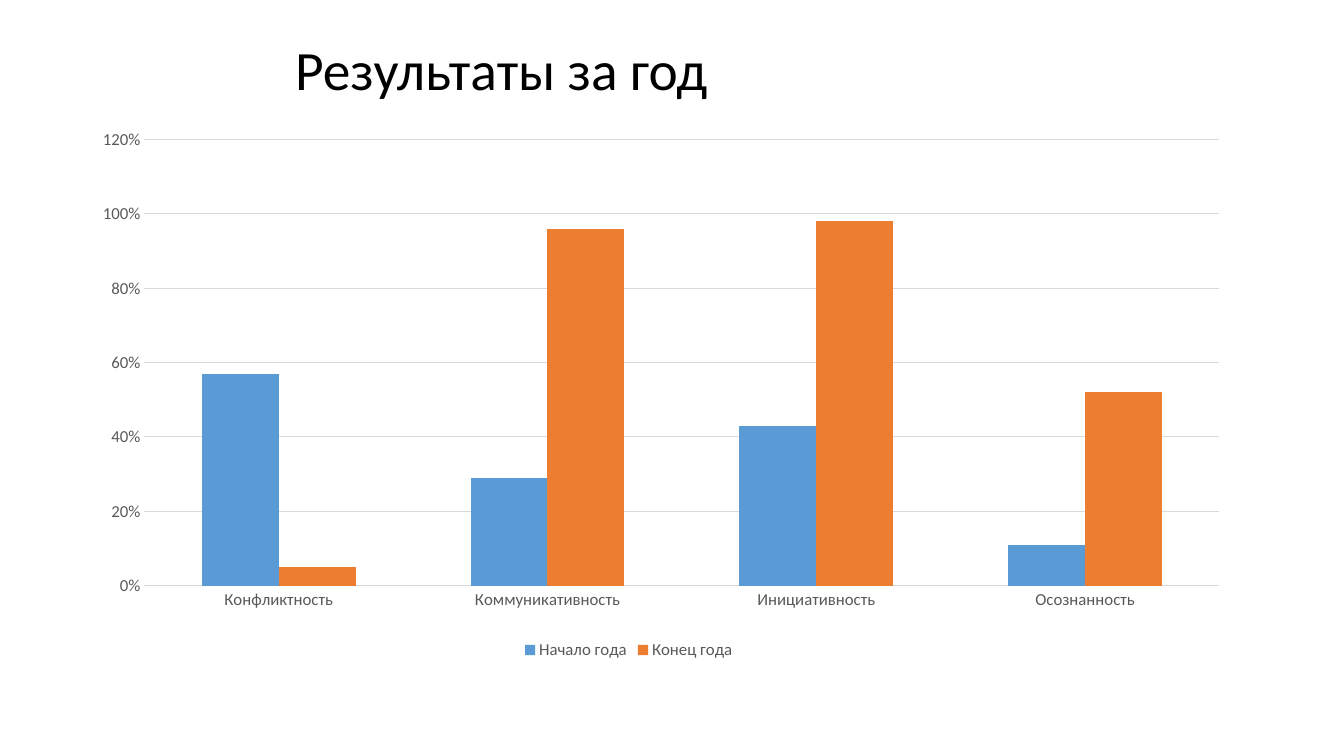
from lxml.etree import SubElement
from pptx import Presentation
from pptx.chart.data import CategoryChartData as ChartData
from pptx.dml.color import RGBColor as Rgb
from pptx.enum.chart import XL_CHART_TYPE as ChartType
from pptx.enum.chart import XL_LEGEND_POSITION as LegendSpot
from pptx.enum.chart import XL_TICK_MARK as Tick
from pptx.enum.text import MSO_ANCHOR as Anchor
from pptx.enum.text import PP_ALIGN as Align
from pptx.oxml.ns import qn
from pptx.util import Emu, Pt

EMU_PER_PX = 914400 / 100.8
SLIDE_SIZE = (1344, 756)
TITLE_BOX = (285, 43, 593, 117)
CHART_BOX = (38, 106, 1182, 558)
PLOT_AREA = {"x": 0.09, "y": 0.06, "w": 0.91, "h": 0.8}
FONT = "Calibri"
COLORS = {
    "title": "000000",
    "label": "595959",
    "grid": "D9D9D9",
    "Начало года": "5B9BD5",
    "Конец года": "ED7D31",
}
CRITERIA = ["Конфликтность", "Коммуникативность", "Инициативность", "Осознанность"]
RESULTS = {
    "Начало года": [0.57, 0.29, 0.43, 0.11],
    "Конец года": [0.05, 0.96, 0.98, 0.52],
}


def px(length):
    return Emu(round(length * EMU_PER_PX))


def apply_format(target, values):
    for name, value in values.items():
        setattr(target, name, value)


def format_font(font, size, color):
    apply_format(font, {"name": FONT, "size": Pt(size), "bold": False})
    font.color.rgb = Rgb.from_string(COLORS[color])


def format_line(line):
    line.width = Pt(0.75)
    line.color.rgb = Rgb.from_string(COLORS["grid"])


def write_title(title, text):
    apply_format(title, dict(zip(("left", "top", "width", "height"), map(px, TITLE_BOX))))
    frame = title.text_frame
    apply_format(frame, {"text": text, "word_wrap": True,
                         "vertical_anchor": Anchor.TOP, "margin_top": 0})
    heading = frame.paragraphs[0]
    apply_format(heading, {"alignment": Align.LEFT, "line_spacing": 0.9, "space_before": Pt(0)})
    format_font(heading.runs[0].font, 39.6, "title")


def place_plot(chart):
    plot_area = chart.element.find(".//" + qn("c:plotArea"))
    for automatic in plot_area.findall(qn("c:layout")):
        plot_area.remove(automatic)
    layout = SubElement(plot_area, qn("c:layout"))
    plot_area.insert(0, layout)
    manual = SubElement(layout, qn("c:manualLayout"))
    settings = {"layoutTarget": "inner", "xMode": "edge", "yMode": "edge", **PLOT_AREA}
    for tag, value in settings.items():
        SubElement(manual, qn(f"c:{tag}")).set("val", str(value))


def format_axes(chart):
    criteria, share = chart.category_axis, chart.value_axis
    for axis in (criteria, share):
        apply_format(axis, {"major_tick_mark": Tick.NONE, "minor_tick_mark": Tick.NONE})
        format_font(axis.tick_labels.font, 12, "label")
    format_line(criteria.format.line)
    apply_format(share, {"minimum_scale": 0, "maximum_scale": 1.2,
                         "major_unit": 0.2, "has_major_gridlines": True})
    apply_format(share.tick_labels, {"number_format": "0%", "number_format_is_linked": False})
    share.format.line.fill.background()
    format_line(share.major_gridlines.format.line)


def add_results_chart(slide):
    data = ChartData(number_format="0%")
    data.categories = CRITERIA
    for period, shares in RESULTS.items():
        data.add_series(period, shares)
    chart = slide.shapes.add_chart(ChartType.COLUMN_CLUSTERED, *map(px, CHART_BOX), data).chart
    apply_format(chart, {"has_title": False, "has_legend": True})
    format_font(chart.font, 10, "title")
    apply_format(chart.legend, {"position": LegendSpot.BOTTOM, "include_in_layout": False})
    format_font(chart.legend.font, 12, "label")
    format_axes(chart)
    columns = chart.plots[0]
    apply_format(columns, {"gap_width": 150, "overlap": 0, "vary_by_categories": False})
    for period in columns.series:
        period.format.fill.solid()
        period.format.fill.fore_color.rgb = Rgb.from_string(COLORS[period.name])
    place_plot(chart)


def main():
    deck = Presentation()
    deck.slide_width, deck.slide_height = map(px, SLIDE_SIZE)
    slide = deck.slides.add_slide(deck.slide_layouts[5])
    write_title(slide.shapes.title, "Результаты за год")
    add_results_chart(slide)
    deck.save("out.pptx")


if __name__ == "__main__":
    main()
